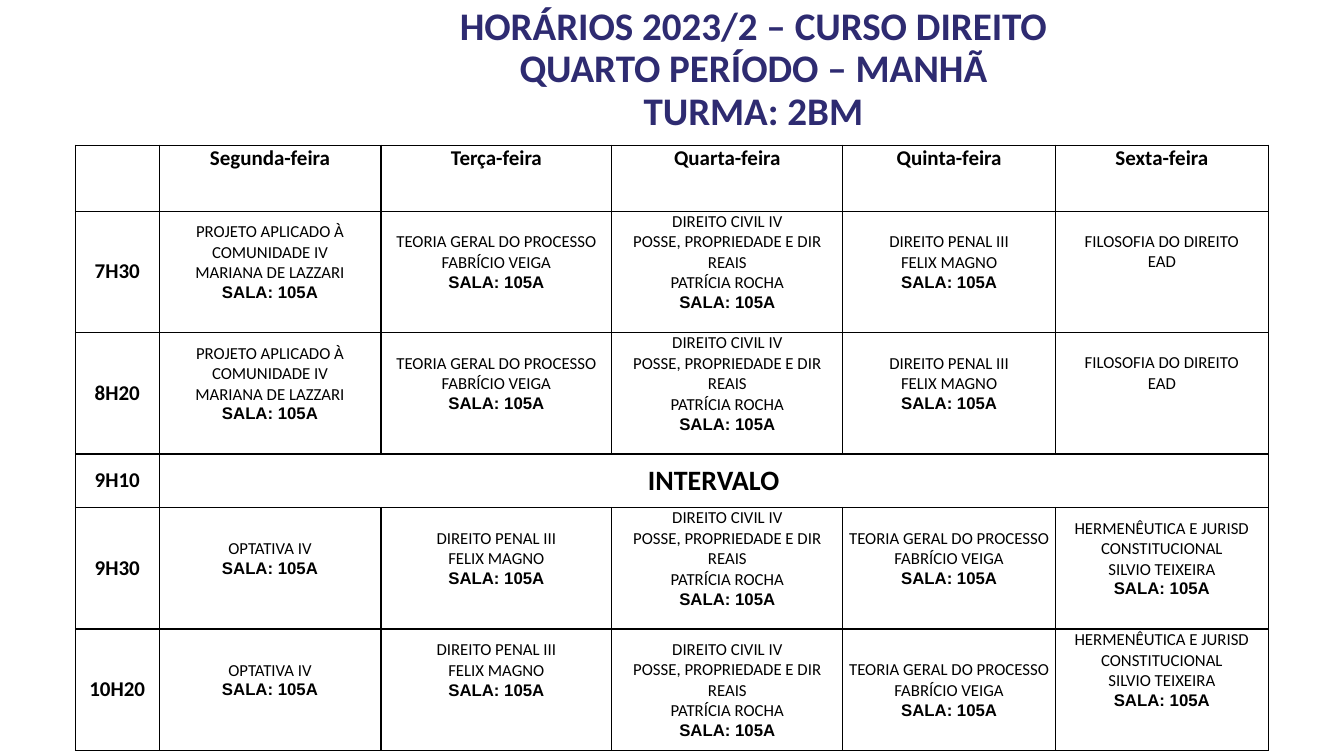
from lxml import etree
from pptx import Presentation
from pptx.dml.color import RGBColor
from pptx.enum.text import MSO_ANCHOR, MSO_AUTO_SIZE, PP_ALIGN
from pptx.oxml.ns import qn
from pptx.util import Cm, Pt

MIDDLE, TOP = MSO_ANCHOR.MIDDLE, MSO_ANCHOR.TOP
CENTER = PP_ALIGN.CENTER
NO_FIT = MSO_AUTO_SIZE.NONE
BLACK, NAVY = "000000", "2E2B71"

# Text formats
HEAD = {"name": "Calibri", "size": Pt(15), "bold": True}
BREAK = HEAD | {"size": Pt(20)}
BODY = HEAD | {"size": Pt(12), "bold": False}
ROOM = BODY | {"name": "Arial", "bold": True}
TITLE = HEAD | {"size": Pt(27.9)}

# Timetable content
DAYS = ["Segunda-feira", "Terça-feira", "Quarta-feira", "Quinta-feira", "Sexta-feira"]
SALA = "SALA: 105A"
PROJ = ["PROJETO APLICADO À COMUNIDADE IV", "MARIANA DE LAZZARI", SALA]
TEORIA = ["TEORIA GERAL DO PROCESSO", "FABRÍCIO VEIGA", SALA]
CIVIL = ["DIREITO CIVIL IV", "POSSE, PROPRIEDADE E DIR REAIS", "PATRÍCIA ROCHA", SALA]
PENAL = ["DIREITO PENAL III", "FELIX MAGNO", SALA]
FILO = ["FILOSOFIA DO DIREITO", "EAD"]
OPT = ["OPTATIVA IV", SALA]
HERM = ["HERMENÊUTICA E JURISD CONSTITUCIONAL", "SILVIO TEIXEIRA", SALA]
EARLY = [PROJ, TEORIA, CIVIL, PENAL, FILO]
LATE = [OPT, PENAL, CIVIL, TEORIA, HERM]

# Hour, classes, and space below each class in cm
HOURS = [
    ("7H30", EARLY, [0.5, 0.5, 0.5, 0.5, 1]),
    ("8H20", EARLY, [0.5, 0.5, 0.5, 0.5, 1]),
    ("9H10", None, None),
    ("9H30", LATE, [0.5] * 5),
    ("10H20", LATE, [0.5, 1, 0, 0, 1]),
]
COLS = [2.11, 5.59, 5.82, 5.82, 5.36, 5.36]
ROWS = [1.66, 3.06, 3.06, 1.35, 3.06, 3.06]


def paint(text):
    return RGBColor.from_string(text)


def style(font, form, color=BLACK):
    for key, value in form.items():
        setattr(font, key, value)
    font.color.rgb = paint(color)


def edge(cell):
    """Draw a thin black line on all four sides."""
    props = cell._tc.get_or_add_tcPr()
    for place, side in enumerate(("a:lnL", "a:lnR", "a:lnT", "a:lnB")):
        line = etree.Element(qn(side), w=str(Pt(1)))
        fill = etree.SubElement(line, qn("a:solidFill"))
        etree.SubElement(fill, qn("a:srgbClr"), val=BLACK)
        props.insert(place, line)


def write(cell, lines, form, below=0, anchor=MIDDLE):
    cell.vertical_anchor = anchor
    cell.margin_bottom = Cm(below)
    frame = cell.text_frame
    for index, line in enumerate(lines):
        para = frame.add_paragraph() if index else frame.paragraphs[0]
        para.alignment = CENTER
        run = para.add_run()
        run.text = line
        style(run.font, ROOM if line == SALA else form)


def add_title(slide):
    title = slide.shapes.title
    title.left, title.top, title.width, title.height = Cm(8.33), Cm(0.53), Cm(21.31), Cm(3.68)
    frame = title.text_frame
    frame.text = "HORÁRIOS 2023/2 – CURSO DIREITO\vQUARTO PERÍODO – MANHÃ\vTURMA: 2BM"
    form = {"word_wrap": True, "auto_size": NO_FIT, "vertical_anchor": MIDDLE,
            "margin_top": 0, "margin_bottom": Cm(1.2)}
    for key, value in form.items():
        setattr(frame, key, value)
    para = frame.paragraphs[0]
    para.alignment, para.line_spacing = CENTER, 0.9
    for run in para.runs:
        style(run.font, TITLE, NAVY)


def add_grid(slide):
    frame = slide.shapes.add_table(len(ROWS), len(COLS), Cm(1.9), Cm(3.66),
                                   Cm(sum(COLS)), Cm(sum(ROWS)))
    grid = frame.table
    grid.first_row = grid.horz_banding = False
    for col, width in zip(grid.columns, COLS):
        col.width = Cm(width)
    for row, height in zip(grid.rows, ROWS):
        row.height = Cm(height)
    for cell in grid.iter_cells():
        cell.margin_left = cell.margin_right = Cm(0.13)
        cell.margin_top = cell.margin_bottom = 0
        cell.fill.background()
        edge(cell)
    return grid


def fill_grid(grid):
    # Days
    for col, day in enumerate(DAYS, 1):
        write(grid.cell(0, col), [day], HEAD, anchor=TOP)
    # Hours and classes
    for row, (hour, items, gaps) in enumerate(HOURS, 1):
        write(grid.cell(row, 0), [hour], HEAD)
        if items is None:
            pause = grid.cell(row, 1)
            pause.merge(grid.cell(row, len(DAYS)))
            write(pause, ["INTERVALO"], BREAK)
            continue
        for col, (item, gap) in enumerate(zip(items, gaps), 1):
            write(grid.cell(row, col), item, BODY, gap)


def main():
    deck = Presentation()
    deck.slide_width, deck.slide_height = Cm(33.87), Cm(19.05)
    slide = deck.slides.add_slide(deck.slide_layouts[5])
    add_title(slide)
    fill_grid(add_grid(slide))
    deck.save("out.pptx")


if __name__ == "__main__":
    main()
